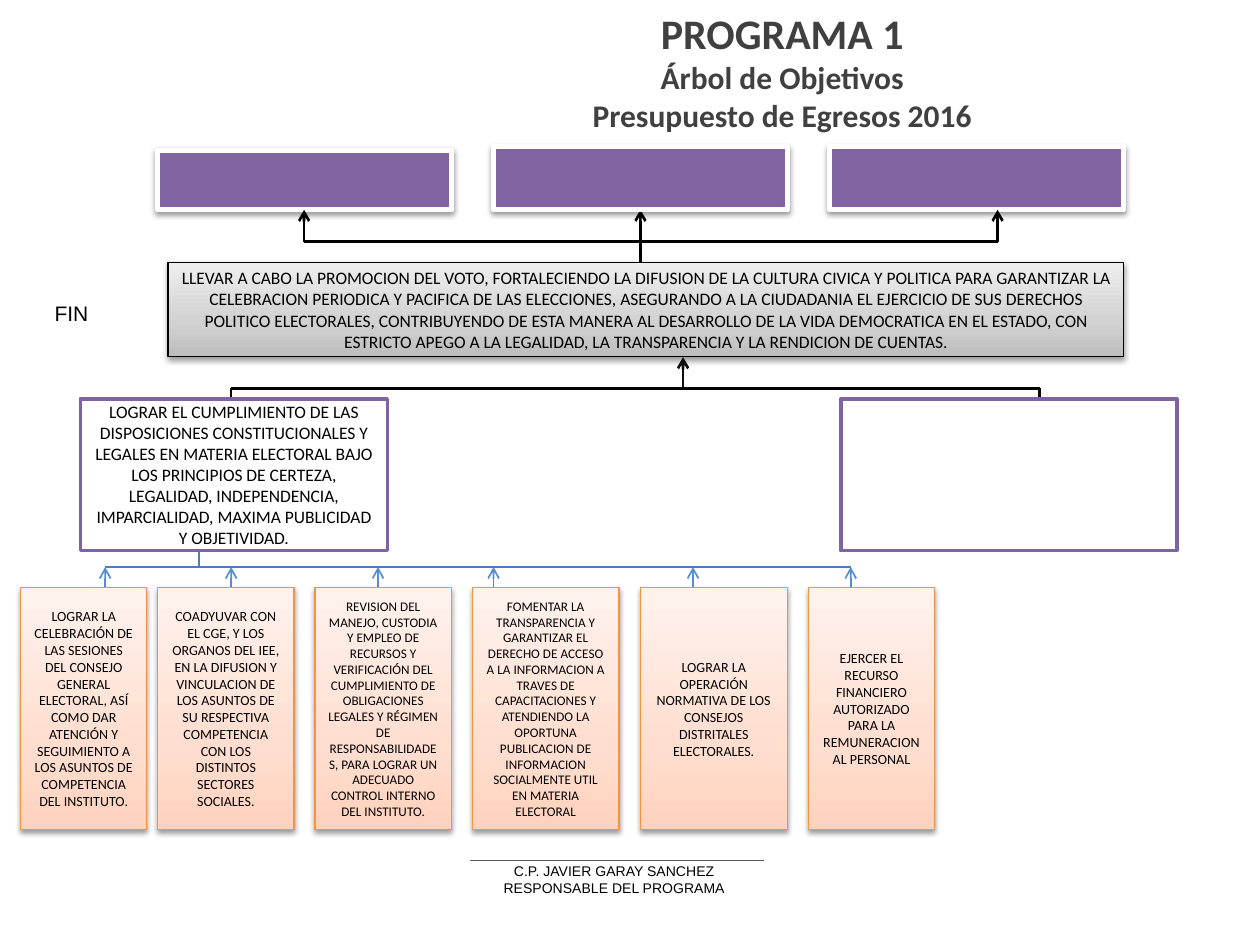
from copy import deepcopy
from typing import NamedTuple

from lxml import etree
from pptx import Presentation
from pptx import util as u
from pptx.dml.color import RGBColor
from pptx.enum import shapes, text
from pptx.oxml.ns import qn

PURPLE, BLACK, WHITE = "8064A2", "000000", "FFFFFF"
ORANGE, SKY, BLUE, GREY = "F69240", "558ED5", "4B7EBC", "595959"
SILVER = ("BDBDBD", "D1D1D1", "EEEEEE")
PEACH = ("FFD2BD", "FFDED0", "FFF2ED")
STOPS = (0, 0.35, 1)


class Box(NamedTuple):
    left: float
    top: float
    width: float
    height: float
    words: str = ""
    size: float = 10


class Look(NamedTuple):
    fill: str | tuple
    line: str
    weight: float
    shade: bool = True


class Line(NamedTuple):
    x1: float
    y1: float
    x2: float
    y2: float
    color: str = BLACK
    weight: float = 1.5
    arrow: bool = False


EFFECT = Look(PURPLE, WHITE, 3)
PURPOSE = Look(SILVER, BLACK, 0.75)
GOAL = Look(WHITE, PURPLE, 2, False)
TASK = Look(PEACH, ORANGE, 0.75)

# Levels of the tree, in cm
ROOF, BAR_1, BAR_2, BAR_3 = 4.23, 4.87, 7.83, 11.43
GOAL_TOP, GOAL_H, TASK_TOP, TASK_H = 8.04, 3.06, 11.85, 4.87

EFFECTS = [Box(x, ROOF - h, 5.93, h)
           for x, h in ((3.18, 1.2), (9.95, 1.27), (16.72, 1.27))]
AIM = Box(3.39, 5.29, 19.26, 1.9, (
    "LLEVAR A CABO LA PROMOCION DEL VOTO, FORTALECIENDO LA DIFUSION DE LA CULTURA "
    "CIVICA Y POLITICA PARA GARANTIZAR LA CELEBRACION PERIODICA Y PACIFICA DE LAS "
    "ELECCIONES, ASEGURANDO A LA CIUDADANIA EL EJERCICIO DE SUS DERECHOS POLITICO "
    "ELECTORALES, CONTRIBUYENDO DE ESTA MANERA AL DESARROLLO DE LA VIDA DEMOCRATICA "
    "EN EL ESTADO, CON ESTRICTO APEGO A LA LEGALIDAD, LA TRANSPARENCIA Y LA RENDICION "
    "DE CUENTAS."))
GOALS = [
    Box(1.62, GOAL_TOP, 6.19, GOAL_H, (
        "LOGRAR EL CUMPLIMIENTO DE LAS DISPOSICIONES CONSTITUCIONALES Y LEGALES EN "
        "MATERIA ELECTORAL BAJO LOS PRINCIPIOS DE CERTEZA, LEGALIDAD, INDEPENDENCIA, "
        "IMPARCIALIDAD, MAXIMA PUBLICIDAD Y OBJETIVIDAD.")),
    Box(16.95, GOAL_TOP, 6.78, GOAL_H),
]
TASKS = [Box(x, TASK_TOP, w, TASK_H, words, size) for x, w, size, words in (
    (0.42, 2.54, 8, "LOGRAR LA CELEBRACIÓN DE LAS SESIONES DEL CONSEJO GENERAL ELECTORAL, "
     "ASÍ COMO DAR ATENCIÓN Y SEGUIMIENTO A LOS ASUNTOS DE COMPETENCIA DEL INSTITUTO."),
    (3.18, 2.75, 8, "COADYUVAR CON EL CGE, Y LOS ORGANOS DEL IEE, EN LA DIFUSION Y "
     "VINCULACION DE LOS ASUNTOS DE SU RESPECTIVA COMPETENCIA CON LOS DISTINTOS "
     "SECTORES SOCIALES."),
    (6.35, 2.75, 7.5, "REVISION DEL MANEJO, CUSTODIA Y EMPLEO DE RECURSOS Y VERIFICACIÓN "
     "DEL CUMPLIMIENTO DE OBLIGACIONES LEGALES Y RÉGIMEN DE RESPONSABILIDADES, PARA "
     "LOGRAR UN ADECUADO CONTROL INTERNO DEL INSTITUTO."),
    (9.52, 2.96, 7.5, "FOMENTAR LA TRANSPARENCIA Y GARANTIZAR EL DERECHO DE ACCESO A LA "
     "INFORMACION A TRAVES DE CAPACITACIONES Y ATENDIENDO LA OPORTUNA PUBLICACION DE "
     "INFORMACION SOCIALMENTE UTIL EN MATERIA ELECTORAL"),
    (12.91, 2.96, 8, "LOGRAR LA OPERACIÓN NORMATIVA DE LOS CONSEJOS DISTRITALES "
     "ELECTORALES."),
    (16.3, 2.54, 8, "EJERCER EL RECURSO FINANCIERO AUTORIZADO PARA LA REMUNERACION AL "
     "PERSONAL"),
)]

BACK = [Line(x, 12.07, x, BAR_3, SKY, 1, True)
        for x in (2.12, 4.66, 7.62, 9.95, 13.97, 17.15)] + [
    Line(9.47, 17.34, 15.4, 17.34, GREY, 0.75),
    Line(12.91, AIM.top, 12.91, ROOF, arrow=True),
    Line(4.01, 11, 4.01, BAR_3, BLUE, 0.75),
    Line(2.12, BAR_3, 17.15, BAR_3, BLUE, 0.75),
    Line(4.66, BAR_2, 20.96, BAR_2),
] + [Line(x, BAR_2, x, 8.47) for x in (4.66, 20.96)]
FRONT = [Line(13.77, BAR_2, 13.77, 7.2, "0D0D0D", arrow=True),
         Line(6.13, BAR_1, 20.11, BAR_1)] + [
    Line(x, BAR_1, x, ROOF, arrow=True) for x in (6.13, 20.11)]


def tint(code: str) -> RGBColor:
    return RGBColor.from_string(code)


def cm(*sizes: float) -> list:
    return [u.Cm(n) for n in sizes]


def style(font, size: float, face: str = "Calibri", color: str = BLACK,
          bold: bool = False) -> None:
    for key, val in {"size": u.Pt(size), "name": face, "bold": bold}.items():
        setattr(font, key, val)
    font.color.rgb = tint(color)


def blend(shape, codes: tuple) -> None:
    """Fill from the bottom up through three colours."""
    fill = shape.fill
    fill.gradient()
    fill.gradient_angle = 90
    last = shape._element.spPr.findall(".//" + qn("a:gs"))[-1]
    last.addnext(deepcopy(last))
    for stop, code, place in zip(fill.gradient_stops, codes, STOPS):
        stop.color.rgb = tint(code)
        stop.position = place


def shade(shape) -> None:
    effects = shape._element.spPr.find(qn("a:effectLst"))
    drop = etree.SubElement(effects, qn("a:outerShdw"), blurRad="40000", dist="20000",
                            dir="5400000", rotWithShape="0")
    color = etree.SubElement(drop, qn("a:srgbClr"), val=BLACK)
    etree.SubElement(color, qn("a:alpha"), val="38000")


def draw_box(slide, box: Box, look: Look) -> None:
    shape = slide.shapes.add_shape(shapes.MSO_SHAPE.RECTANGLE, *cm(*box[:4]))
    shape.shadow.inherit = False
    if look.shade:
        shade(shape)
    if isinstance(look.fill, tuple):
        blend(shape, look.fill)
    else:
        shape.fill.solid()
        shape.fill.fore_color.rgb = tint(look.fill)
    shape.line.color.rgb = tint(look.line)
    shape.line.width = u.Pt(look.weight)
    if box.words:
        frame = shape.text_frame
        frame.word_wrap = True
        frame.text = box.words
        frame.paragraphs[0].alignment = text.PP_ALIGN.CENTER
        style(frame.paragraphs[0].runs[0].font, box.size)


def draw_line(slide, line: Line) -> None:
    link = slide.shapes.add_connector(shapes.MSO_CONNECTOR.STRAIGHT, *cm(*line[:4]))
    link.line.color.rgb = tint(line.color)
    link.line.width = u.Pt(line.weight)
    if line.arrow:
        etree.SubElement(link.line._get_or_add_ln(), qn("a:tailEnd"), type="arrow")
    etree.SubElement(link._element.spPr, qn("a:effectLst"))


def draw_note(slide, box: Box, align) -> None:
    frame = slide.shapes.add_textbox(*cm(*box[:4])).text_frame
    frame.word_wrap = True
    frame.auto_size = text.MSO_AUTO_SIZE.SHAPE_TO_FIT_TEXT
    frame.text = box.words
    for para in frame.paragraphs:
        para.alignment = align
        style(para.runs[0].font, box.size, "Arial")


def draw_title(slide) -> None:
    title = slide.shapes.title
    spots = zip(("left", "top", "width", "height"), cm(6.56, 0.43, 18.42, 1.98))
    for key, val in spots:
        setattr(title, key, val)
    frame = title.text_frame
    frame.auto_size = text.MSO_AUTO_SIZE.NONE
    frame.vertical_anchor = text.MSO_ANCHOR.MIDDLE
    para = frame.paragraphs[0]
    para.alignment = text.PP_ALIGN.CENTER
    rows = (("PROGRAMA 1", 24), ("Árbol de Objetivos", 18),
            ("Presupuesto de Egresos 2016", 18))
    for i, (words, size) in enumerate(rows):
        if i:
            para.add_line_break()
            # A break takes the format of the run before it
            para._p[-1].append(deepcopy(run._r.rPr))
        run = para.add_run()
        run.text = words
        style(run.font, size, color="404040", bold=True)


def main() -> None:
    deck = Presentation()
    deck.slide_width, deck.slide_height = cm(25.4, 19.05)
    slide = deck.slides.add_slide(deck.slide_layouts[5])
    draw_title(slide)
    # Links behind the boxes
    for line in BACK:
        draw_line(slide, line)
    # Boxes, level by level
    for group, look in ((EFFECTS, EFFECT), ([AIM], PURPOSE), (GOALS, GOAL), (TASKS, TASK)):
        for box in group:
            draw_box(slide, box, look)
    # Links in front of the boxes
    for line in FRONT:
        draw_line(slide, line)
    # Side label and signature
    draw_note(slide, Box(0.85, 5.93, 1.27, 0.76, "FIN", 12), text.PP_ALIGN.LEFT)
    sign = "C.P. JAVIER GARAY SANCHEZ\nRESPONSABLE DEL PROGRAMA"
    draw_note(slide, Box(8.89, 17.27, 6.99, 0.94, sign, 8), text.PP_ALIGN.CENTER)
    deck.save("out.pptx")


if __name__ == "__main__":
    main()
